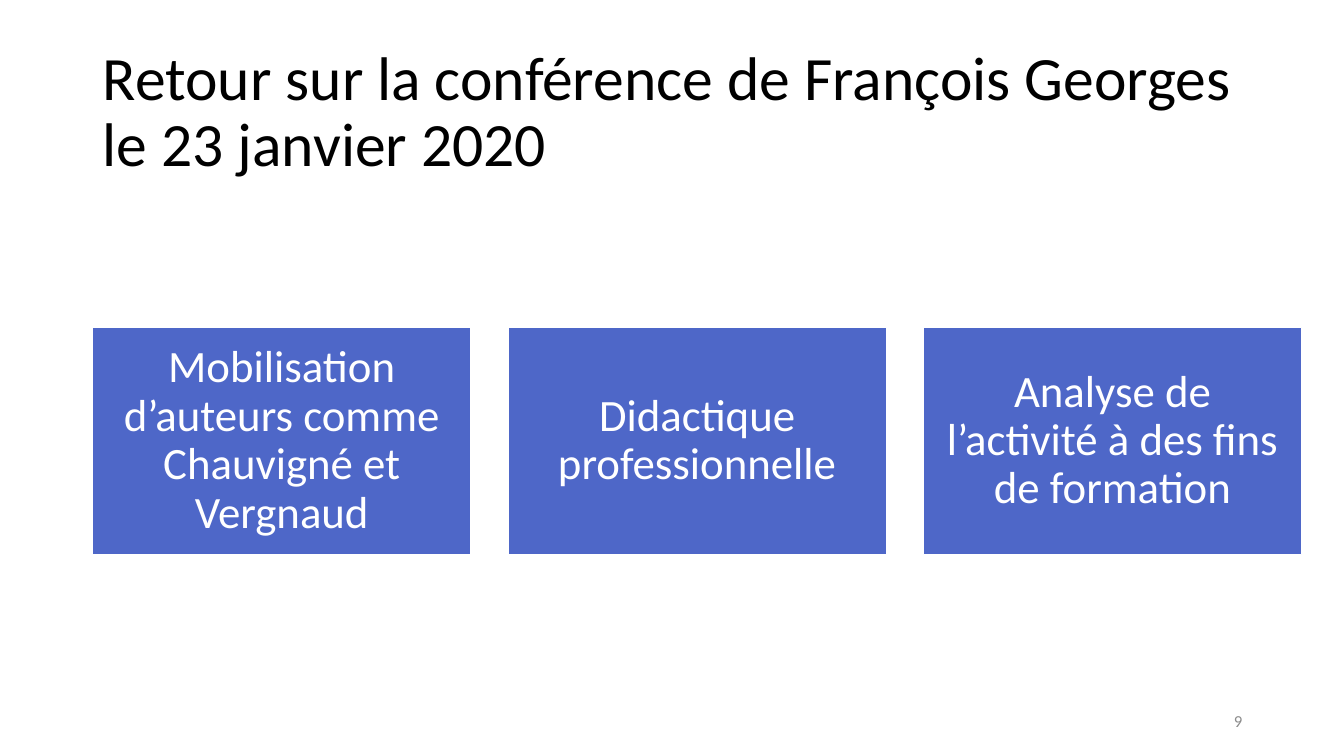
from pptx import Presentation
from pptx.dml.color import RGBColor
from pptx.enum.shapes import MSO_SHAPE
from pptx.enum.text import MSO_ANCHOR, PP_ALIGN
from pptx.util import Inches, Pt

COLORS = {"blue": "4E67C8", "white": "FFFFFF", "black": "000000", "grey": "8C8C8C"}
FONT = "Calibri"
THEMES = [
    "Mobilisation d’auteurs comme Chauvigné et Vergnaud",
    "Didactique professionnelle",
    "Analyse de l’activité à des fins de formation",
]
BOX_LEFT, BOX_TOP, BOX_WIDTH, BOX_HEIGHT, BOX_STEP = 0.92, 3.25, 3.75, 2.25, 4.12


def rgb(name):
    return RGBColor.from_string(COLORS[name])


def write_text(sp, text, size, color, align=PP_ALIGN.LEFT, spacing=1.0, inset=None):
    tf = sp.text_frame
    tf.word_wrap = True
    tf.vertical_anchor = MSO_ANCHOR.MIDDLE
    if inset is not None:
        for side in ("left", "top", "right", "bottom"):
            setattr(tf, f"margin_{side}", Inches(inset))
    p = tf.paragraphs[0]
    p.alignment = align
    p.line_spacing = spacing
    r = p.add_run()
    r.text = text
    for name, value in {"name": FONT, "size": Pt(size)}.items():
        setattr(r.font, name, value)
    r.font.color.rgb = rgb(color)


def add_text(s, box, text, size, color, **fmt):
    sp = s.shapes.add_textbox(*map(Inches, box))
    write_text(sp, text, size, color, **fmt)


def add_theme_box(s, left, text):
    box = (left, BOX_TOP, BOX_WIDTH, BOX_HEIGHT)
    sp = s.shapes.add_shape(MSO_SHAPE.RECTANGLE, *map(Inches, box))
    sp.shadow.inherit = False
    sp.fill.solid()
    sp.fill.fore_color.rgb = rgb("blue")
    sp.line.color.rgb = rgb("white")
    sp.line.width = Pt(1)
    write_text(sp, text, 32, "white", align=PP_ALIGN.CENTER, spacing=0.9, inset=0.13)


def main():
    prs = Presentation()
    prs.slide_width, prs.slide_height = Inches(13.33), Inches(7.5)
    s = prs.slides.add_slide(prs.slide_layouts[6])
    add_text(s, (0.92, 0.4, 11.5, 1.45),
             "Retour sur la conférence de François Georges le 23 janvier 2020",
             44, "black", spacing=0.9)
    for i, theme in enumerate(THEMES):
        add_theme_box(s, BOX_LEFT + i * BOX_STEP, theme)
    add_text(s, (9.42, 6.95, 3, 0.4), "9", 12, "grey", align=PP_ALIGN.RIGHT)
    prs.save("out.pptx")


if __name__ == "__main__":
    main()
